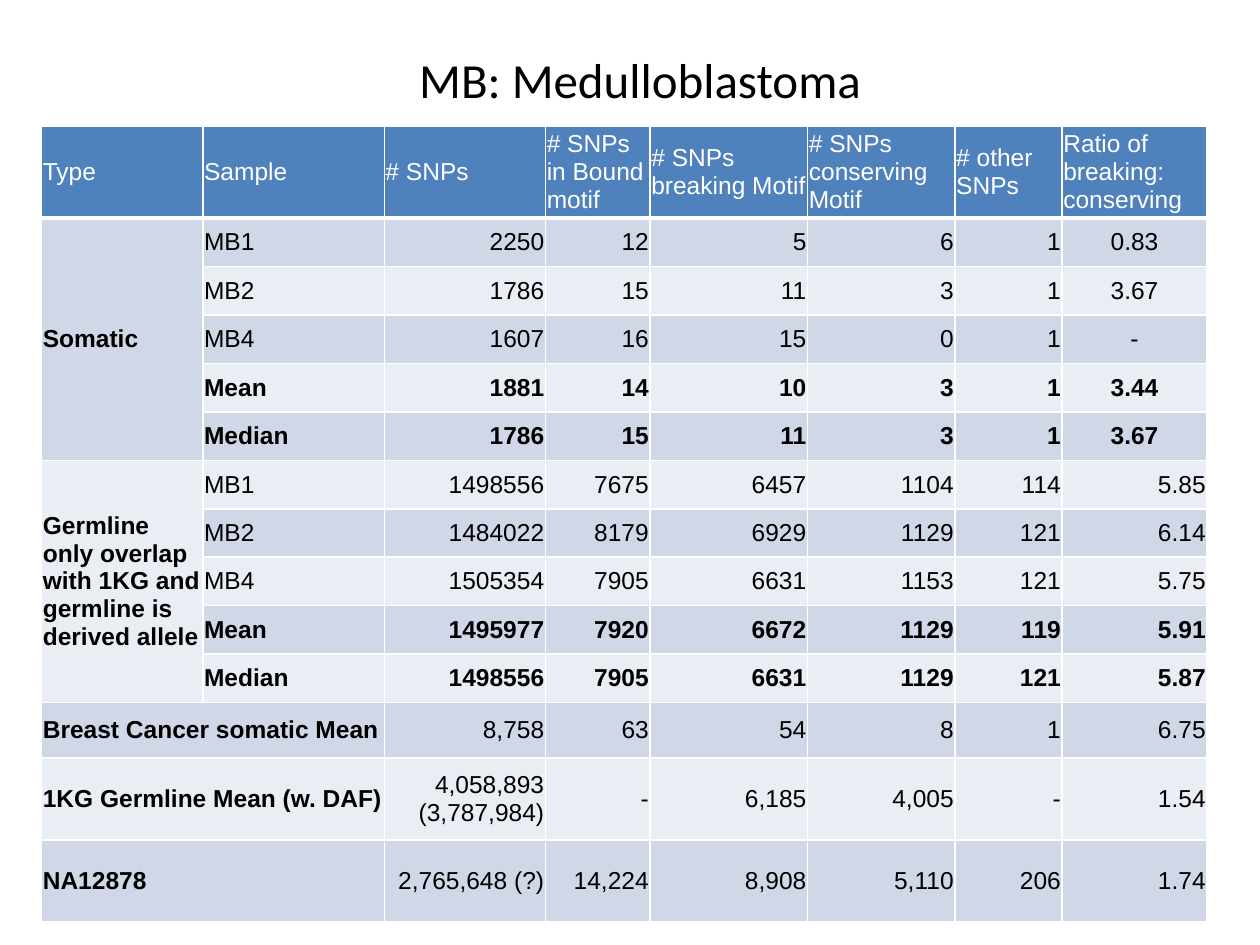
from lxml import etree
from pptx import Presentation
from pptx import util as u
from pptx.dml import color
from pptx.enum import text
from pptx.oxml import ns

LEFT, CENTER, RIGHT = text.PP_ALIGN.LEFT, text.PP_ALIGN.CENTER, text.PP_ALIGN.RIGHT


def rgb(value):
    return color.RGBColor.from_string(value)


def add_border(cell, side, points):
    """Draw a white line on one side (L, R, T or B); call before setting the fill."""
    line = etree.SubElement(cell._tc.get_or_add_tcPr(), ns.qn(f"a:ln{side}"), w=str(u.Pt(points)))
    solid = etree.SubElement(line, ns.qn("a:solidFill"))
    etree.SubElement(solid, ns.qn("a:srgbClr"), val="FFFFFF")


deck = Presentation()
deck.slide_width, deck.slide_height = u.Inches(10), u.Inches(7.5)
page = deck.slides.add_slide(deck.slide_layouts[6])

title = page.shapes.add_textbox(u.Inches(0.58), u.Inches(0), u.Inches(9), u.Inches(1.25))
frame = title.text_frame
frame.word_wrap = True
frame.vertical_anchor = text.MSO_ANCHOR.MIDDLE
para = frame.paragraphs[0]
para.text = "MB: Medulloblastoma"
para.alignment = CENTER
para.font.name, para.font.size = "Calibri", u.Pt(28)
para.font.color.rgb = rgb("000000")

rows = [
    ["Type", "Sample", "# SNPs", "# SNPs in Bound motif", "# SNPs breaking Motif",
     "# SNPs conserving Motif", "# other SNPs", "Ratio of breaking:\nconserving"],
    ["Somatic", "MB1", "2250", "12", "5", "6", "1", "0.83"],
    ["", "MB2", "1786", "15", "11", "3", "1", "3.67"],
    ["", "MB4", "1607", "16", "15", "0", "1", "-"],
    ["", "Mean", "1881", "14", "10", "3", "1", "3.44"],
    ["", "Median", "1786", "15", "11", "3", "1", "3.67"],
    ["Germline\nonly overlap with 1KG and germline is derived allele",
     "MB1", "1498556", "7675", "6457", "1104", "114", "5.85"],
    ["", "MB2", "1484022", "8179", "6929", "1129", "121", "6.14"],
    ["", "MB4", "1505354", "7905", "6631", "1153", "121", "5.75"],
    ["", "Mean", "1495977", "7920", "6672", "1129", "119", "5.91"],
    ["", "Median", "1498556", "7905", "6631", "1129", "121", "5.87"],
    ["Breast Cancer somatic Mean", "", "8,758", "63", "54", "8", "1", "6.75"],
    ["1KG Germline Mean (w. DAF)", "", "4,058,893 (3,787,984)", "-", "6,185", "4,005", "-", "1.54"],
    ["NA12878", "", "2,765,648 (?)", "14,224", "8,908", "5,110", "206", "1.74"],
]
column_widths = [1.28, 1.44, 1.28, 0.83, 1.25, 1.17, 0.85, 1.15]
sample_height = 3.85 / 10
row_heights = [0.73] + [sample_height] * 10 + [0.44, 0.65, 0.65]

table = page.shapes.add_table(
    len(rows), len(column_widths), u.Inches(0.33), u.Inches(1),
    u.Inches(sum(column_widths)), u.Inches(sum(row_heights))).table
for column, width in zip(table.columns, column_widths):
    column.width = u.Inches(width)
for row, height in zip(table.rows, row_heights):
    row.height = u.Inches(height)

for r, values in enumerate(rows):
    is_header = r == 0
    is_summary = values[1] in ("Mean", "Median")
    band = "4F81BD" if is_header else ("E9EDF4", "D0D8E8")[r % 2]
    for c, value in enumerate(values):
        cell = table.cell(r, c)
        cell.margin_left = cell.margin_right = u.Inches(0.01)
        cell.margin_top = cell.margin_bottom = 0
        cell.vertical_anchor = text.MSO_ANCHOR.MIDDLE
        for side in "LRTB":
            heavy = (r, side) in ((0, "B"), (1, "T"))
            add_border(cell, side, 3 if heavy else 1)
        cell.fill.solid()
        cell.fill.fore_color.rgb = rgb(band)

        if is_header or c < 2:
            alignment = LEFT
        elif c == 7 and r <= 5:
            alignment = CENTER
        else:
            alignment = RIGHT
        cell.text = value
        for para in cell.text_frame.paragraphs:
            para.alignment = alignment
            para.font.name, para.font.size = "Arial", u.Pt(14)
            para.font.bold = not is_header and (c == 0 or is_summary)
            para.font.color.rgb = rgb("FFFFFF" if is_header else "000000")

for first in (1, 6):
    table.cell(first, 0).merge(table.cell(first + 4, 0))
for r in (11, 12, 13):
    table.cell(r, 0).merge(table.cell(r, 1))

deck.save("out.pptx")
